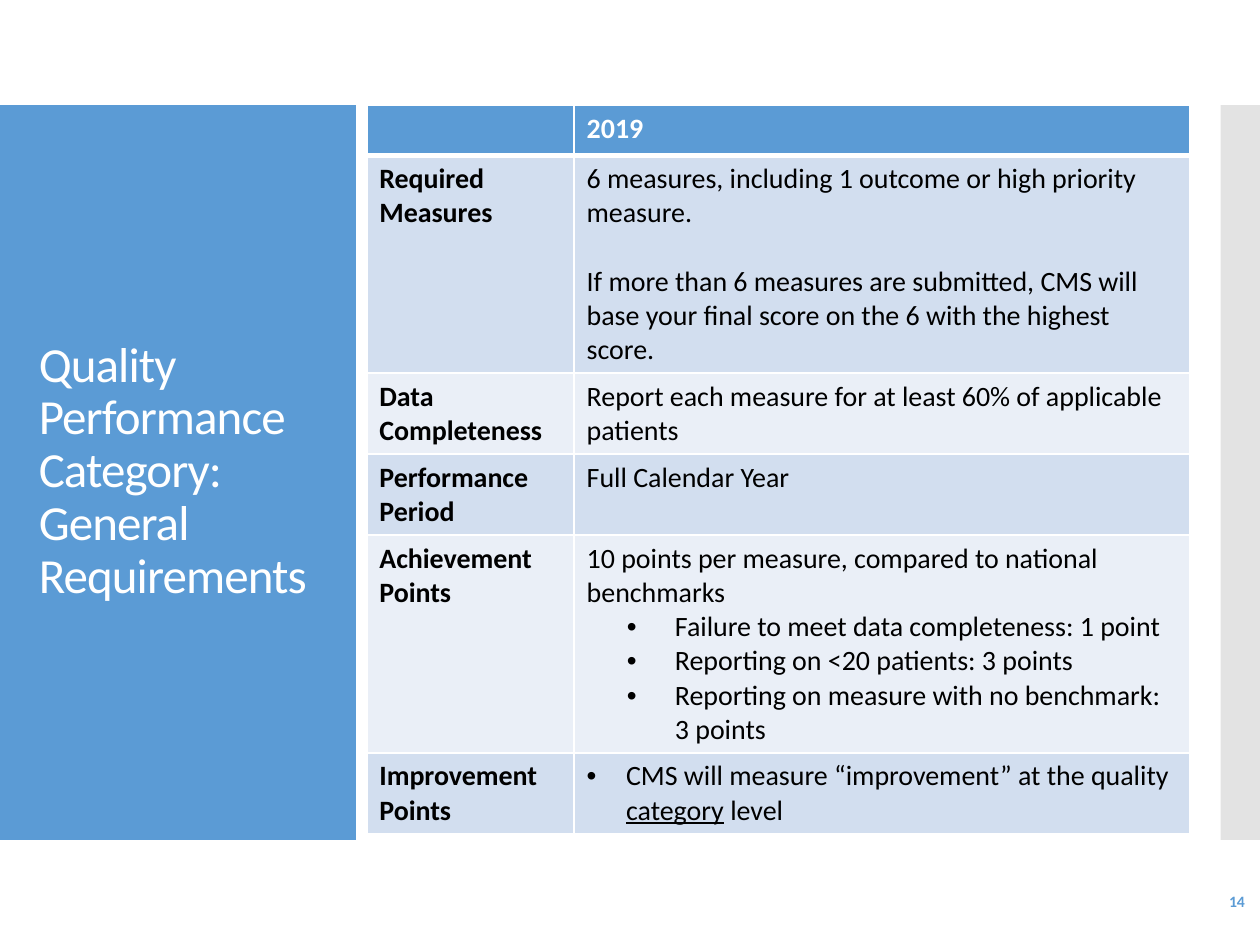
from dataclasses import dataclass

from lxml import etree
from pptx import Presentation
from pptx.dml.color import RGBColor
from pptx.enum import shapes, text
from pptx.oxml import ns
from pptx.util import Pt


@dataclass(frozen=True)
class Theme:
    font: str = "Calibri"
    accent: str = "5B9BD5"
    side: str = "C8C8C8"
    white: str = "FFFFFF"
    ink: str = "000000"
    bands: tuple = ("D2DEEF", "EAEFF7")
    title_size: float = 28
    body_size: float = 16
    number_size: float = 9


@dataclass
class Line:
    """One paragraph: its (text, underlined) pieces, gap above, indent and hang."""
    pieces: list
    before: float = 0
    indent: float = 0
    hang: float = 0


def plain(words, **layout):
    return Line([(words, False)], **layout)


def sub_element(parent, tag, **attributes):
    return etree.SubElement(parent, ns.qn(tag), **attributes)


class SlideBuilder:
    def __init__(self, slide, theme):
        self.slide = slide
        self.theme = theme

    def add_run(self, paragraph, words, size, color, bold=False, underline=False):
        run = paragraph.add_run()
        run.text = words
        font = run.font
        font.name = self.theme.font
        font.size = Pt(size)
        font.bold = bold
        font.color.rgb = RGBColor.from_string(color)
        if underline:
            font.underline = True
        return run

    def add_panel(self, left, top, width, height, color, opacity=100):
        shape = self.slide.shapes.add_shape(
            shapes.MSO_SHAPE.RECTANGLE, Pt(left), Pt(top), Pt(width), Pt(height))
        shape.shadow.inherit = False
        shape.fill.solid()
        shape.fill.fore_color.rgb = RGBColor.from_string(color)
        shape.line.fill.background()
        if opacity < 100:
            fill_color = shape._element.spPr.find(".//" + ns.qn("a:srgbClr"))
            sub_element(fill_color, "a:alpha", val=str(opacity * 1000))

    def add_text(self, words, left, top, width, height, size, color,
                 bold=False, align=text.PP_ALIGN.LEFT, line_spacing=1.0, tracking=0):
        box = self.slide.shapes.add_textbox(Pt(left), Pt(top), Pt(width), Pt(height))
        frame = box.text_frame
        frame.word_wrap = True
        frame.vertical_anchor = text.MSO_ANCHOR.MIDDLE
        paragraph = frame.paragraphs[0]
        paragraph.alignment = align
        paragraph.line_spacing = line_spacing
        run = self.add_run(paragraph, words, size, color, bold)
        if tracking:
            run._r.get_or_add_rPr().set("spc", str(round(tracking * 100)))

    def style_cell(self, cell, color, top, bottom):
        """Draw white borders, then fill the cell."""
        properties = cell._tc.get_or_add_tcPr()
        for side, width in (("L", 1), ("R", 1), ("T", top), ("B", bottom)):
            border = sub_element(properties, f"a:ln{side}", w=str(Pt(width)))
            fill = sub_element(border, "a:solidFill")
            sub_element(fill, "a:srgbClr", val=self.theme.white)
        cell.fill.solid()
        cell.fill.fore_color.rgb = RGBColor.from_string(color)

    def write_cell(self, cell, lines, color, bold):
        frame = cell.text_frame
        for index, line in enumerate(lines):
            paragraph = frame.add_paragraph() if index else frame.paragraphs[0]
            if line.before:
                paragraph.space_before = Pt(line.before)
            if line.indent:
                properties = paragraph._p.get_or_add_pPr()
                properties.set("marL", str(Pt(line.indent)))
                properties.set("indent", str(-Pt(line.hang)))
                sub_element(properties, "a:buFont", typeface="Arial")
                sub_element(properties, "a:buChar", char="•")
            for words, underline in line.pieces:
                self.add_run(paragraph, words, self.theme.body_size, color, bold, underline)

    def add_table(self, left, top, widths, heights, rows):
        table = self.slide.shapes.add_table(
            len(rows), len(widths), Pt(left), Pt(top),
            Pt(sum(widths)), Pt(sum(heights))).table
        for column, width in zip(table.columns, widths):
            column.width = Pt(width)
        for index, (height, row) in enumerate(zip(heights, rows)):
            table.rows[index].height = Pt(height)
            header = index == 0
            fill = self.theme.accent if header else self.theme.bands[(index - 1) % 2]
            color = self.theme.white if header else self.theme.ink
            for column, lines in enumerate(row):
                cell = table.cell(index, column)
                self.style_cell(cell, fill, top=3 if index == 1 else 1,
                                bottom=3 if header else 1)
                self.write_cell(cell, lines, color, bold=header or column == 0)


def requirement_rows():
    blank_line = 19.5
    nested = {"indent": 50.4, "hang": 27.4}
    return [
        ([], [plain("2019")]),
        ([plain("Required Measures")], [
            plain("6 measures, including 1 outcome or high priority measure."),
            plain("If more than 6 measures are submitted, CMS will base your final "
                  "score on the 6 with the highest score.", before=blank_line)]),
        ([plain("Data Completeness")],
         [plain("Report each measure for at least 60% of applicable patients")]),
        ([plain("Performance Period")], [plain("Full Calendar Year")]),
        ([plain("Achievement Points")], [
            plain("10 points per measure, compared to national benchmarks"),
            plain("Failure to meet data completeness: 1 point", **nested),
            plain("Reporting on <20 patients: 3 points", **nested),
            plain("Reporting on measure with no benchmark: 3 points", **nested)]),
        ([plain("Improvement Points")], [
            Line([("CMS will measure “improvement” at the quality ", False),
                  ("category", True), (" level", False)], indent=22.5, hang=22.5)]),
    ]


def main():
    presentation = Presentation()
    presentation.slide_width, presentation.slide_height = Pt(720), Pt(540)
    theme = Theme()
    builder = SlideBuilder(
        presentation.slides.add_slide(presentation.slide_layouts[6]), theme)

    band_top, band_height = 60, 420
    builder.add_panel(0, band_top, 203.4, band_height, theme.accent)
    builder.add_panel(697.5, band_top, 22.5, band_height, theme.side, opacity=50)
    builder.add_text("Quality Performance Category: General Requirements",
                     15.1, 88.6, 174.2, 362.2, theme.title_size, theme.white,
                     line_spacing=0.9, tracking=-0.5)
    builder.add_text("14", 628, 500.4, 90.5, 28.8, theme.number_size, theme.accent,
                     bold=True, align=text.PP_ALIGN.RIGHT)

    two_lines, six_lines = 46.3, 124.4
    builder.add_table(209.6, band_top, widths=[118.5, 351.5],
                      heights=[28.8, six_lines, two_lines, two_lines, six_lines, two_lines],
                      rows=requirement_rows())
    presentation.save("out.pptx")


if __name__ == "__main__":
    main()
